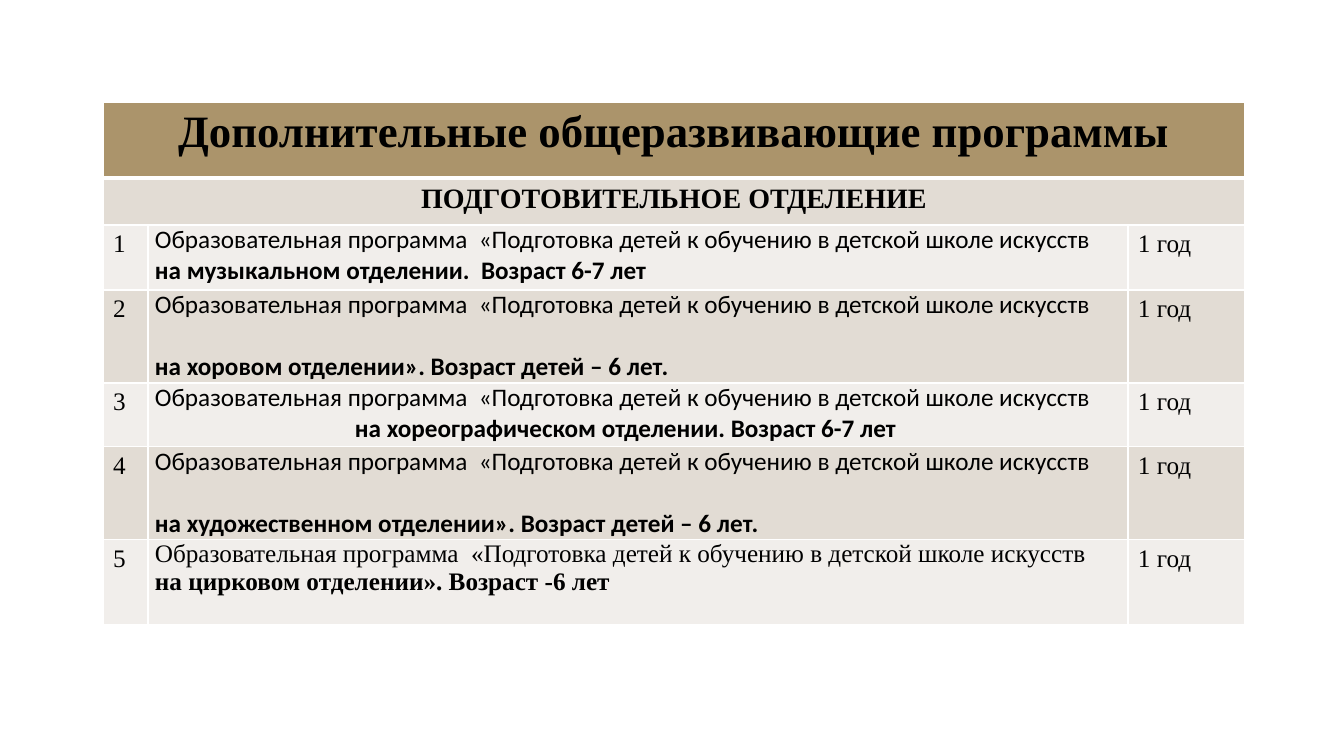
from dataclasses import dataclass

from lxml.etree import SubElement
from pptx import Presentation
from pptx.dml.color import RGBColor as Color
from pptx.enum.text import PP_ALIGN as Align
from pptx.oxml.ns import qn
from pptx.util import Pt

EMU_PER_PX = 914400 / 100.8


def px(count):
    return round(count * EMU_PER_PX)


@dataclass(frozen=True)
class Theme:
    header: str = "AB946B"
    dark_band: str = "E2DCD4"
    light_band: str = "F1EEEB"
    border: str = "FFFFFF"
    text: str = "000000"
    serif: str = "Times New Roman"
    sans: str = "Calibri"
    title_size: int = 32
    section_size: int = 20
    body_size: int = 18
    line_gap: int = 22


THEME = Theme()
COLUMNS = [45, 980, 117]
HEADING_ROWS = [76, 47]
PROGRAM = "Образовательная программа  «Подготовка детей к обучению в детской школе искусств"
DURATION = "1 год"


@dataclass(frozen=True)
class Program:
    department: str
    height: int
    font: str = THEME.sans
    gap: int = 0
    indent: int = 0


PROGRAMS = [
    Program("на музыкальном отделении.  Возраст 6-7 лет", 65),
    Program("на хоровом отделении». Возраст детей – 6 лет.", 93, gap=THEME.line_gap),
    Program("на хореографическом отделении. Возраст 6-7 лет", 64, indent=200),
    Program("на художественном отделении». Возраст детей – 6 лет.", 93, gap=THEME.line_gap),
    Program("на цирковом отделении». Возраст -6 лет", 85, font=THEME.serif),
]


def add_text(para, text, size=THEME.body_size, font=THEME.serif, bold=False):
    span = para.add_run()
    span.text = text
    span.font.size = Pt(size)
    span.font.name = font
    span.font.bold = bold
    span.font.color.rgb = Color.from_string(THEME.text)


def style_cell(cell, fill, top=1, bottom=1):
    """Borders go in before the fill, as the schema orders them."""
    properties = cell._tc.get_or_add_tcPr()
    for side, width in (("L", 1), ("R", 1), ("T", top), ("B", bottom)):
        line = SubElement(properties, qn(f"a:ln{side}"), w=str(Pt(width)))
        solid = SubElement(line, qn("a:solidFill"))
        SubElement(solid, qn("a:srgbClr"), val=THEME.border)
    cell.fill.solid()
    cell.fill.fore_color.rgb = Color.from_string(fill)


def fill_heading(table, row, text, size, fill, top=1, bottom=1):
    for cell in table.rows[row].cells:
        style_cell(cell, fill, top, bottom)
    heading = table.cell(row, 0)
    heading.merge(table.cell(row, len(COLUMNS) - 1))
    para = heading.text_frame.paragraphs[0]
    para.alignment = Align.CENTER
    add_text(para, text, size, bold=True)


def fill_program(table, row, number, program):
    fill = THEME.light_band if number % 2 else THEME.dark_band
    cells = table.rows[row].cells
    for cell in cells:
        style_cell(cell, fill)
    number_cell, name_cell, duration_cell = cells
    add_text(number_cell.text_frame.paragraphs[0], str(number))
    add_text(duration_cell.text_frame.paragraphs[0], DURATION)

    # Program name, then the department and age
    name_cell.margin_left = name_cell.margin_right = px(7)
    name_cell.margin_top = name_cell.margin_bottom = 0
    frame = name_cell.text_frame
    add_text(frame.paragraphs[0], PROGRAM, font=program.font)
    para = frame.add_paragraph()
    if program.gap:
        para.space_before = Pt(program.gap)
    if program.indent:
        para._p.get_or_add_pPr().set("marL", str(px(program.indent)))
    add_text(para, program.department, font=program.font, bold=True)


def add_program_table(page, left, top):
    heights = HEADING_ROWS + [program.height for program in PROGRAMS]
    table = page.shapes.add_table(
        len(heights), len(COLUMNS), px(left), px(top), px(sum(COLUMNS)), px(sum(heights))
    ).table
    table.first_row = table.horz_banding = False
    for column, width in zip(table.columns, COLUMNS):
        column.width = px(width)
    for row, height in zip(table.rows, heights):
        row.height = px(height)

    # Title and section rows
    fill_heading(table, 0, "Дополнительные общеразвивающие программы",
                 THEME.title_size, THEME.header, bottom=3)
    fill_heading(table, 1, "ПОДГОТОВИТЕЛЬНОЕ ОТДЕЛЕНИЕ",
                 THEME.section_size, THEME.dark_band, top=3)

    # Numbered programs
    for number, program in enumerate(PROGRAMS, 1):
        fill_program(table, number + len(HEADING_ROWS) - 1, number, program)


def main():
    deck = Presentation()
    deck.slide_width, deck.slide_height = px(1344), px(756)
    page = deck.slides.add_slide(deck.slide_layouts[6])
    add_program_table(page, 103, 102)
    deck.save("out.pptx")


if __name__ == "__main__":
    main()
